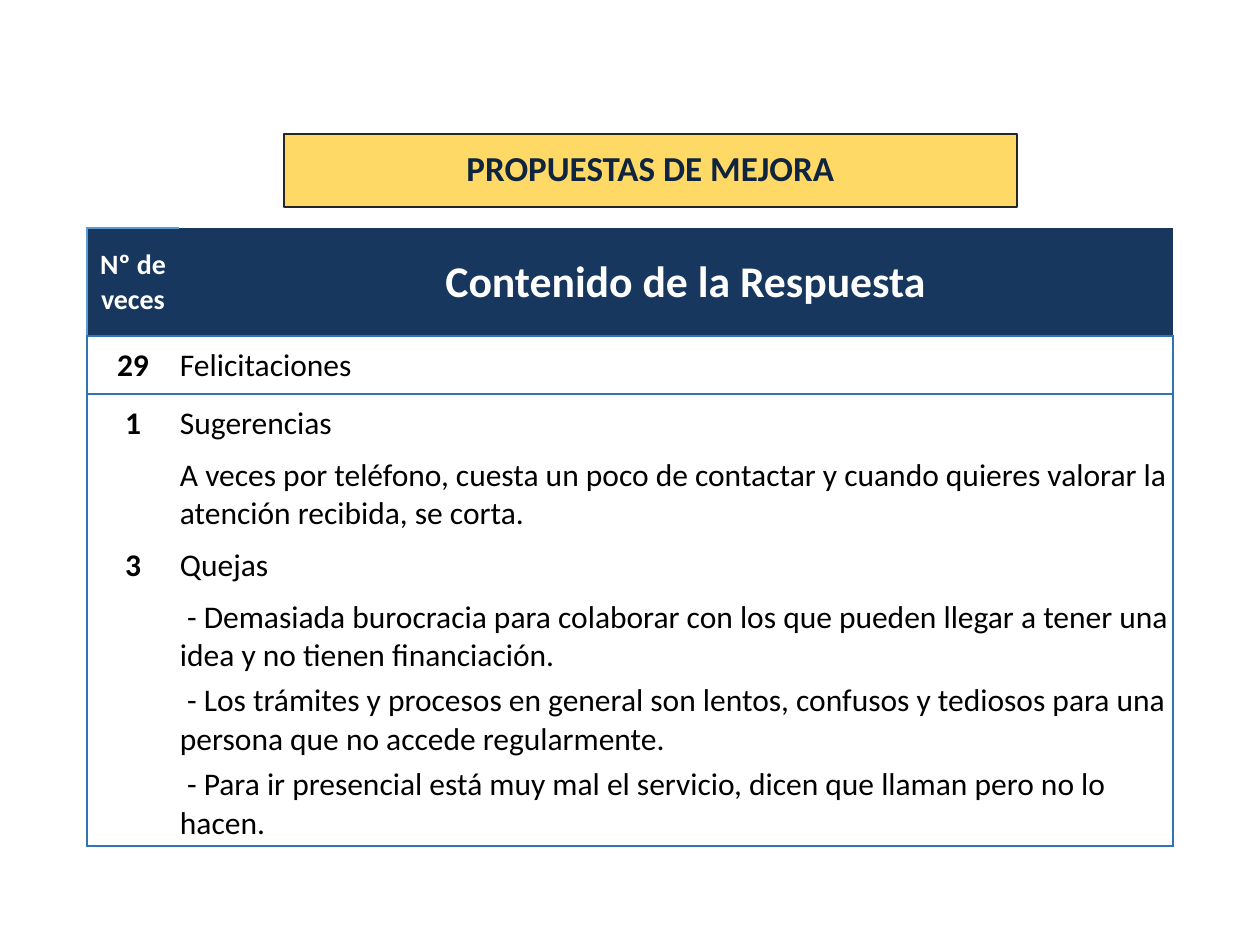
from dataclasses import dataclass

from lxml.etree import SubElement
from pptx import Presentation
from pptx.dml.color import RGBColor
from pptx.enum.shapes import MSO_SHAPE
from pptx.enum.text import MSO_ANCHOR, PP_ALIGN
from pptx.oxml.ns import qn
from pptx.slide import Slide
from pptx.table import Table, _Cell
from pptx.text.text import TextFrame
from pptx.util import Emu, Pt


@dataclass(frozen=True)
class Theme:
    font: str = "Calibri"
    banner: str = "FFD966"
    banner_line: str = "262626"
    banner_text: str = "0F243E"
    header: str = "17375E"
    header_line: str = "5B9BD5"
    grid: str = "2F75B5"
    white: str = "FFFFFF"
    black: str = "000000"
    title_size: int = 20
    count_header_size: int = 16
    answer_header_size: int = 25
    body_size: int = 18


@dataclass(frozen=True)
class TextStyle:
    size: int
    color: str
    bold: bool = False
    align: PP_ALIGN = PP_ALIGN.LEFT


@dataclass(frozen=True)
class Answer:
    count: str
    text: str
    height: int


THEME = Theme()
SHORT_ROW, TALL_ROW, HEADER_ROW = 58, 84, 108
COLUMN_WIDTHS = (92, 994)
NO_TABLE_STYLE = "{2D5ABB26-0587-4C30-8999-92F81FD0307C}"
ANSWERS = (
    Answer("29", "Felicitaciones", SHORT_ROW),
    Answer("1", "Sugerencias", SHORT_ROW),
    Answer("", "A veces por teléfono, cuesta un poco de contactar y cuando quieres "
           "valorar la atención recibida, se corta.", TALL_ROW),
    Answer("3", "Quejas", SHORT_ROW),
    Answer("", " - Demasiada burocracia para colaborar con los que pueden llegar a "
           "tener una idea y no tienen financiación.", TALL_ROW),
    Answer("", " - Los trámites y procesos en general son lentos, confusos y tediosos "
           "para una persona que no accede regularmente.", TALL_ROW),
    Answer("", " - Para ir presencial está muy mal el servicio, dicen que llaman pero "
           "no lo hacen.", TALL_ROW),
)


def px(length: int) -> Emu:
    return Emu(round(length * 914400 / 126))


def write(frame: TextFrame, text: str, style: TextStyle) -> None:
    frame.text = text
    para = frame.paragraphs[0]
    para.alignment = style.align
    for item in (para, *para.runs):
        item.font.name = THEME.font
        item.font.size = Pt(style.size)
        item.font.bold = style.bold
        item.font.color.rgb = RGBColor.from_string(style.color)


def draw_banner(page: Slide, text: str) -> None:
    box = page.shapes.add_shape(MSO_SHAPE.RECTANGLE, px(284), px(134), px(733), px(73))
    box.shadow.inherit = False
    box.fill.solid()
    box.fill.fore_color.rgb = RGBColor.from_string(THEME.banner)
    box.line.color.rgb = RGBColor.from_string(THEME.banner_line)
    box.line.width = Pt(1)
    frame = box.text_frame
    frame.word_wrap = True
    frame.vertical_anchor = MSO_ANCHOR.MIDDLE
    frame.margin_left = frame.margin_right = px(9)
    frame.margin_top = frame.margin_bottom = px(5)
    write(frame, text, TextStyle(THEME.title_size, THEME.banner_text, True, PP_ALIGN.CENTER))
    frame.paragraphs[0].line_spacing = 0.9


def set_borders(cell: _Cell, borders: dict[str, str]) -> None:
    properties = cell._tc.get_or_add_tcPr()
    sides = [side for side in "LRTB" if side in borders]
    for position, side in enumerate(sides):
        line = SubElement(properties, qn(f"a:ln{side}"), w=str(Pt(1)))
        fill = SubElement(line, qn("a:solidFill"))
        SubElement(fill, qn("a:srgbClr"), val=borders[side])
        properties.insert(position, line)


def fill_cell(cell: _Cell, text: str, style: TextStyle, fill: str,
              borders: dict[str, str], left_margin: int = 1) -> None:
    cell.margin_left = px(left_margin)
    cell.margin_right = cell.margin_top = px(1)
    cell.margin_bottom = 0
    cell.vertical_anchor = MSO_ANCHOR.MIDDLE
    cell.fill.solid()
    cell.fill.fore_color.rgb = RGBColor.from_string(fill)
    set_borders(cell, borders)
    write(cell.text_frame, text, style)


def add_plain_table(page: Slide, heights: list[int]) -> Table:
    frame = page.shapes.add_table(len(heights), len(COLUMN_WIDTHS), px(87), px(228),
                                  px(sum(COLUMN_WIDTHS)), px(sum(heights)))
    table = frame.table
    table.first_row = table.horz_banding = False
    table._tbl.tblPr.find(qn("a:tableStyleId")).text = NO_TABLE_STYLE
    for column, width in zip(table.columns, COLUMN_WIDTHS):
        column.width = px(width)
    for row, height in zip(table.rows, heights):
        row.height = px(height)
    return table


def draw_answers(page: Slide, answers: tuple[Answer, ...]) -> None:
    table = add_plain_table(page, [HEADER_ROW, *(answer.height for answer in answers)])
    count_header = TextStyle(THEME.count_header_size, THEME.white, True, PP_ALIGN.CENTER)
    answer_header = TextStyle(THEME.answer_header_size, THEME.white, True, PP_ALIGN.CENTER)
    count_style = TextStyle(THEME.body_size, THEME.black, True, PP_ALIGN.CENTER)
    answer_style = TextStyle(THEME.body_size, THEME.black)

    fill_cell(table.cell(0, 0), "Nº de veces", count_header, THEME.header,
              {"L": THEME.header_line, "T": THEME.header_line, "B": THEME.grid})
    fill_cell(table.cell(0, 1), "Contenido de la Respuesta", answer_header, THEME.header,
              {"B": THEME.grid}, left_margin=20)
    for row, answer in enumerate(answers, start=1):
        edges = {}
        if row == 1:
            edges["T"] = THEME.grid
        if row == len(answers):
            edges["B"] = THEME.grid
        fill_cell(table.cell(row, 0), answer.count, count_style, THEME.white,
                  {"L": THEME.grid, **edges})
        fill_cell(table.cell(row, 1), answer.text, answer_style, THEME.white,
                  {"R": THEME.grid, **edges})


def main() -> None:
    deck = Presentation()
    deck.slide_width, deck.slide_height = px(1260), px(945)
    page = deck.slides.add_slide(deck.slide_layouts[6])
    draw_banner(page, "PROPUESTAS DE MEJORA")
    draw_answers(page, ANSWERS)
    deck.save("out.pptx")


if __name__ == "__main__":
    main()
